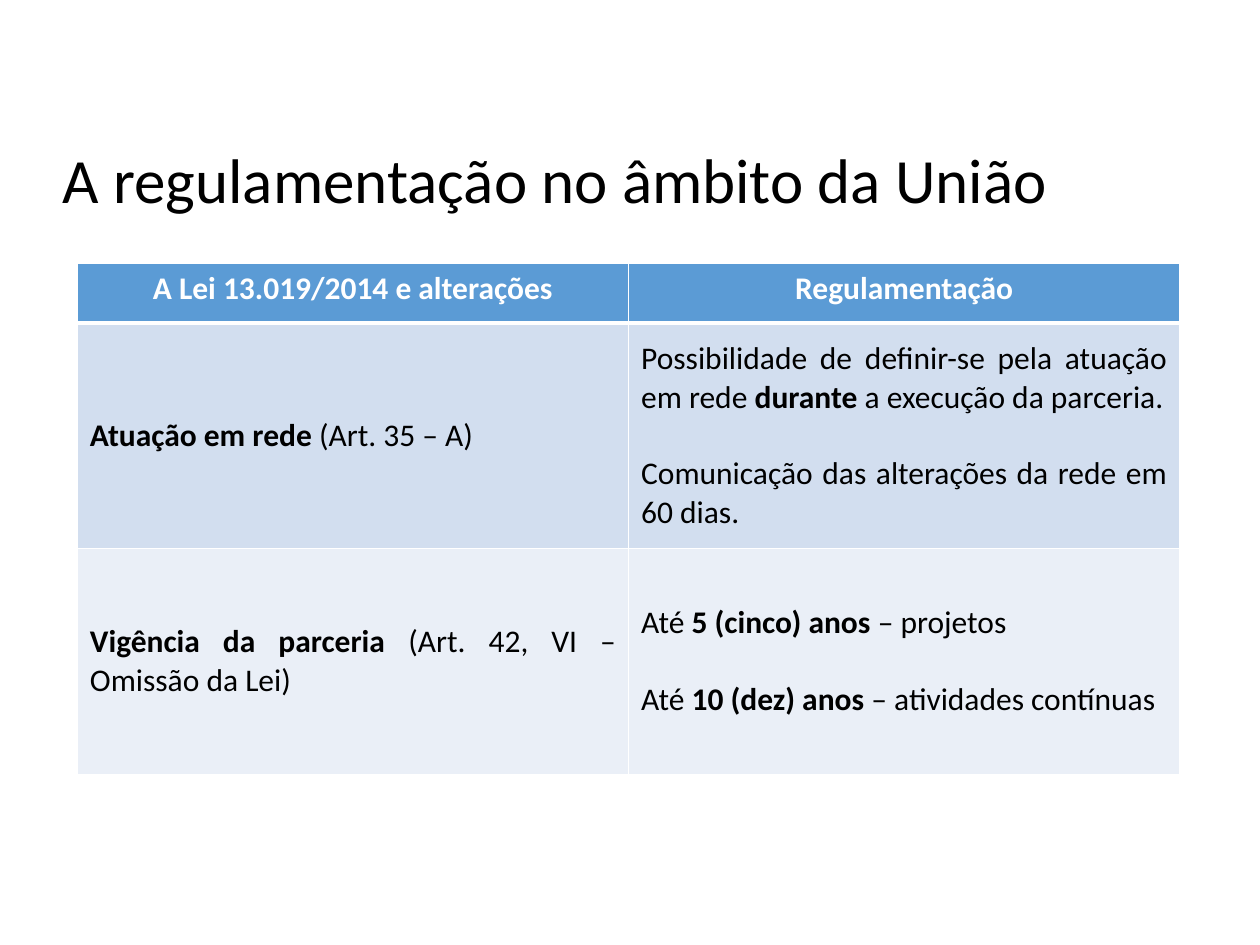
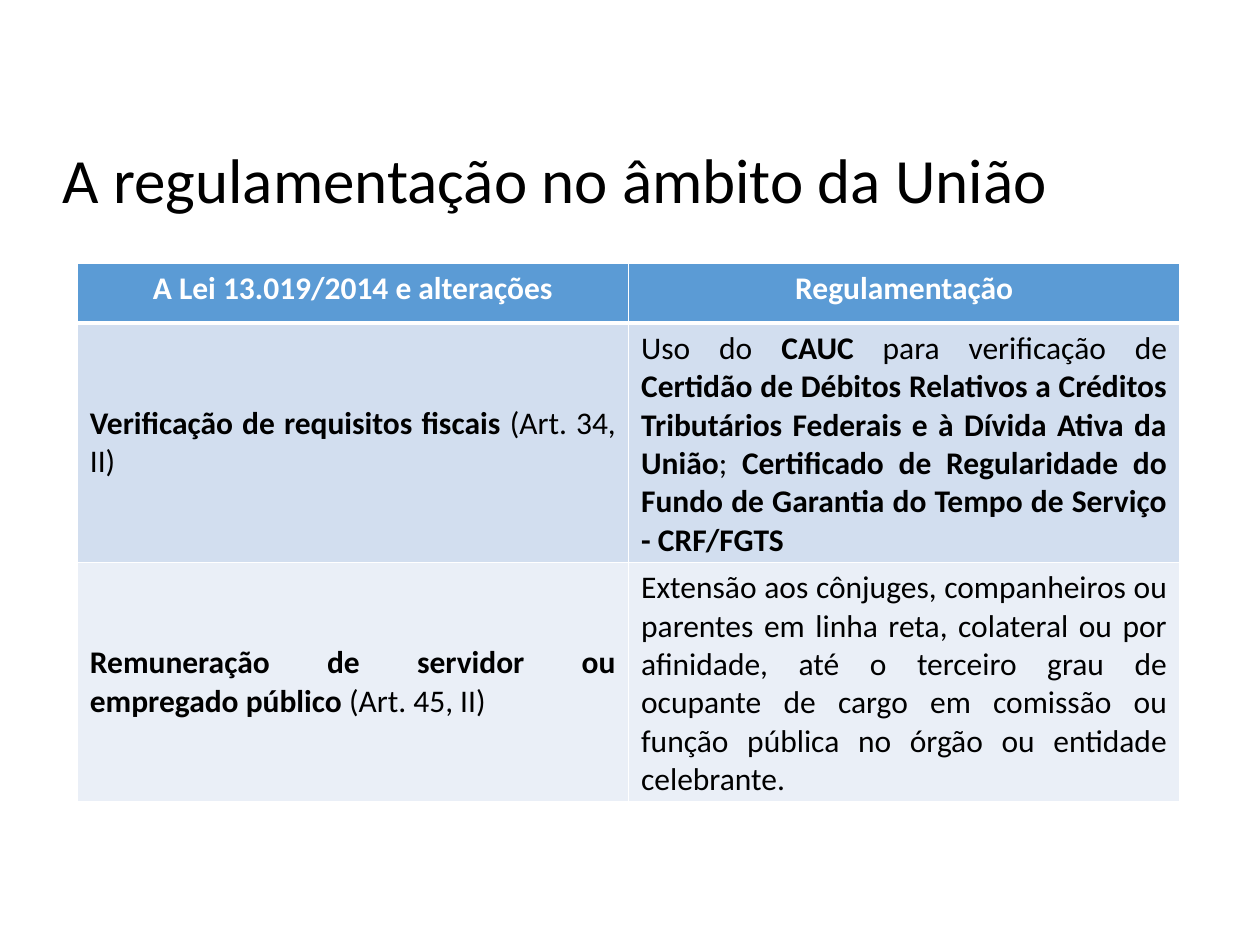
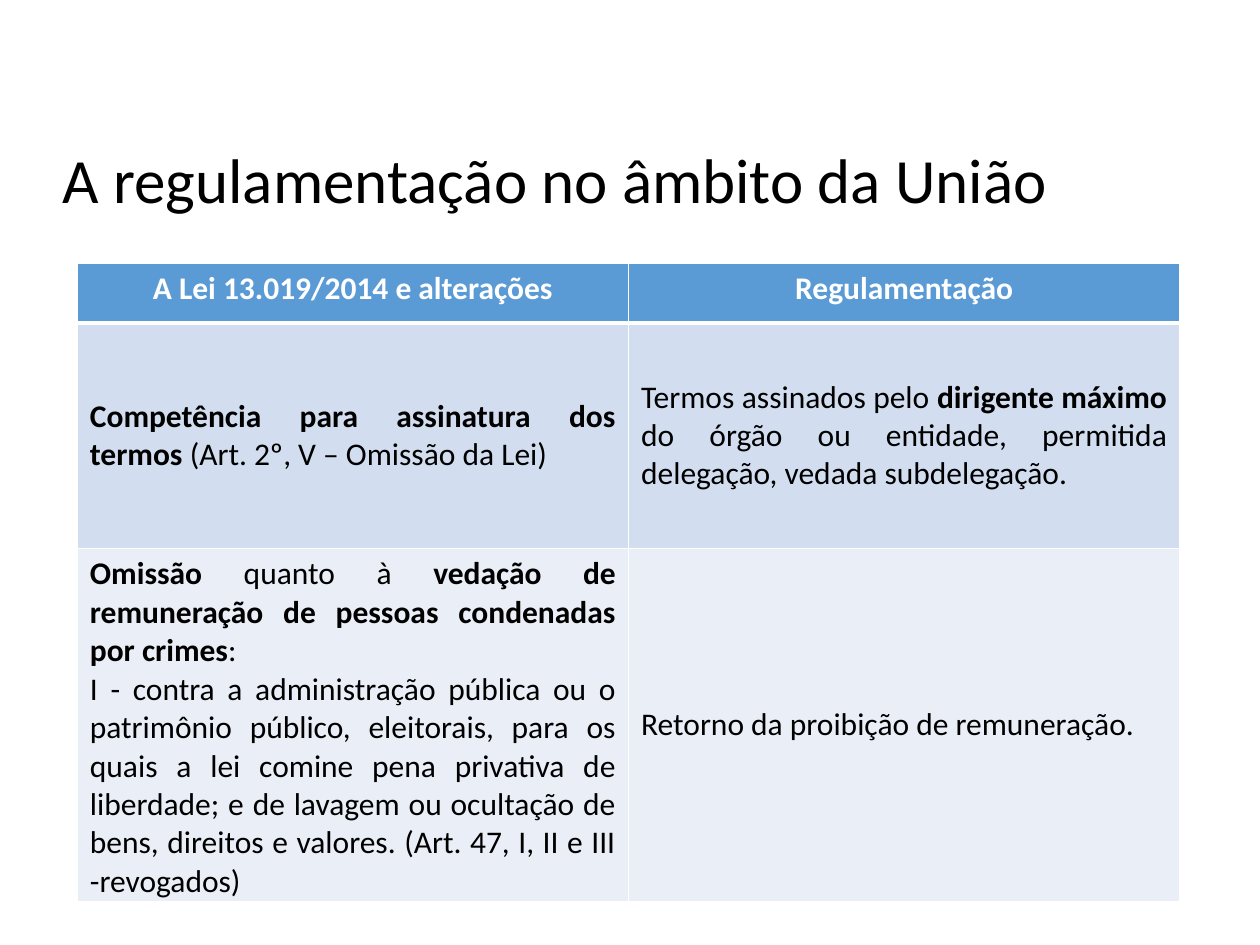
from lxml import etree
from pptx import Presentation
from pptx.dml.color import RGBColor
from pptx.enum.text import MSO_ANCHOR, PP_ALIGN
from pptx.oxml.ns import qn
from pptx.util import Pt

TOP, MIDDLE, BOTTOM = MSO_ANCHOR.TOP, MSO_ANCHOR.MIDDLE, MSO_ANCHOR.BOTTOM
LEFT, CENTER, JUSTIFY = PP_ALIGN.LEFT, PP_ALIGN.CENTER, PP_ALIGN.JUSTIFY

BLACK = RGBColor(0x00, 0x00, 0x00)
WHITE = RGBColor(0xFF, 0xFF, 0xFF)
HEADER_BLUE = RGBColor(0x5B, 0x9B, 0xD5)
BAND_FILLS = (RGBColor(0xD2, 0xDE, 0xEF), RGBColor(0xEA, 0xEF, 0xF7))

TITLE = "A regulamentação no âmbito da União"
HEADERS = ("A Lei 13.019/2014 e alterações", "Regulamentação")

# Each row holds the paragraphs of its two cells; **...** marks bold text.
SLIDE_ROWS = [
    [
        (["**Atuação em rede **(Art. 35 – A)"],
         ["Possibilidade de definir-se pela atuação em rede **durante** a execução da parceria.",
          "Comunicação das alterações da rede em 60 dias."]),
        (["**Vigência da parceria **(Art. 42, VI – Omissão da Lei)"],
         ["Até **5 (cinco) anos **– projetos",
          "Até **10 (dez) anos** – atividades contínuas"]),
    ],
    [
        (["**Verificação de requisitos fiscais **(Art. 34, II)"],
         ["Uso do **CAUC** para verificação de **Certidão de Débitos Relativos a Créditos "
          "Tributários Federais e à Dívida Ativa da União**; **Certificado de Regularidade "
          "do Fundo de Garantia do Tempo de Serviço - CRF/FGTS**"]),
        (["**Remuneração de servidor ou empregado público **(Art. 45, II)"],
         ["Extensão aos cônjuges, companheiros ou parentes em linha reta, colateral ou por "
          "afinidade, até o terceiro grau de ocupante de cargo em comissão ou função pública "
          "no órgão ou entidade celebrante."]),
    ],
    [
        (["**Competência para assinatura dos termos **(Art. 2º, V – Omissão da Lei)"],
         ["Termos assinados pelo **dirigente máximo** do órgão ou entidade, permitida "
          "delegação, vedada subdelegação."]),
        (["**Omissão** quanto à **vedação de remuneração de pessoas condenadas por crimes**:",
          "I - contra a administração pública ou o patrimônio público, eleitorais, para os "
          "quais a lei comine pena privativa de liberdade; e de lavagem ou ocultação de bens, "
          "direitos e valores. (Art. 47, I, II e III -revogados)"],
         ["Retorno da proibição de remuneração."]),
    ],
]


class Deck:
    """Holds the shared style and the slide being built."""

    font_name = "Calibri"
    title_size = Pt(36)
    table_size = Pt(18)
    paragraph_gap = Pt(22)
    column_width = Pt(315)
    header_height = Pt(34)
    row_height = Pt(129)

    def __init__(self):
        self.presentation = Presentation()
        self.presentation.slide_width = Pt(720)
        self.presentation.slide_height = Pt(540)
        self.slide = None

    def add_slide(self):
        self.slide = self.presentation.slides.add_slide(self.presentation.slide_layouts[6])

    def fill_text(self, text_frame, paragraphs, size, color, alignment, gap=Pt(0)):
        """Fill a text frame, turning **...** into bold runs."""
        for index, marked_text in enumerate(paragraphs):
            paragraph = text_frame.add_paragraph() if index else text_frame.paragraphs[0]
            paragraph.alignment = alignment
            if index:
                paragraph.space_before = gap
            for part_index, part in enumerate(marked_text.split("**")):
                if part:
                    run = paragraph.add_run()
                    run.text = part
                    run.font.name = self.font_name
                    run.font.size = size
                    run.font.bold = part_index % 2 == 1
                    run.font.color.rgb = color

    def add_title(self, text):
        title = self.slide.shapes.add_textbox(Pt(28.8), Pt(60.5), Pt(597.6), Pt(67))
        text_frame = title.text_frame
        text_frame.word_wrap = True
        text_frame.vertical_anchor = BOTTOM
        self.fill_text(text_frame, [text], self.title_size, BLACK, LEFT)
        text_frame.paragraphs[0].line_spacing = 0.9

    def style_cell(self, cell, fill, anchor, top_width, bottom_width):
        properties = cell._tc.get_or_add_tcPr()
        widths = {"lnL": Pt(1), "lnR": Pt(1), "lnT": top_width, "lnB": bottom_width}
        for tag, width in widths.items():
            line = etree.SubElement(properties, qn(f"a:{tag}"), w=str(width))
            line_fill = etree.SubElement(line, qn("a:solidFill"))
            etree.SubElement(line_fill, qn("a:srgbClr"), val=str(WHITE))
        cell.fill.solid()
        cell.fill.fore_color.rgb = fill
        cell.vertical_anchor = anchor

    def add_comparison_table(self, headers, rows):
        frame = self.slide.shapes.add_table(
            len(rows) + 1, len(headers), Pt(44.2), Pt(150.5),
            self.column_width * len(headers),
            self.header_height + self.row_height * len(rows))
        table = frame.table
        for column in table.columns:
            column.width = self.column_width
        table.rows[0].height = self.header_height
        for column_index, header in enumerate(headers):
            cell = table.cell(0, column_index)
            self.style_cell(cell, HEADER_BLUE, TOP, Pt(1), Pt(3))
            self.fill_text(cell.text_frame, [f"**{header}**"], self.table_size, WHITE, CENTER)
        for row_index, row in enumerate(rows, start=1):
            table.rows[row_index].height = self.row_height
            fill = BAND_FILLS[(row_index - 1) % len(BAND_FILLS)]
            top_width = Pt(3) if row_index == 1 else Pt(1)
            for column_index, paragraphs in enumerate(row):
                cell = table.cell(row_index, column_index)
                self.style_cell(cell, fill, MIDDLE, top_width, Pt(1))
                gap = self.paragraph_gap if column_index else Pt(0)
                self.fill_text(cell.text_frame, paragraphs, self.table_size, BLACK, JUSTIFY, gap)


def main():
    deck = Deck()
    for rows in SLIDE_ROWS:
        deck.add_slide()
        deck.add_title(TITLE)
        deck.add_comparison_table(HEADERS, rows)
    deck.presentation.save("out.pptx")


if __name__ == "__main__":
    main()
